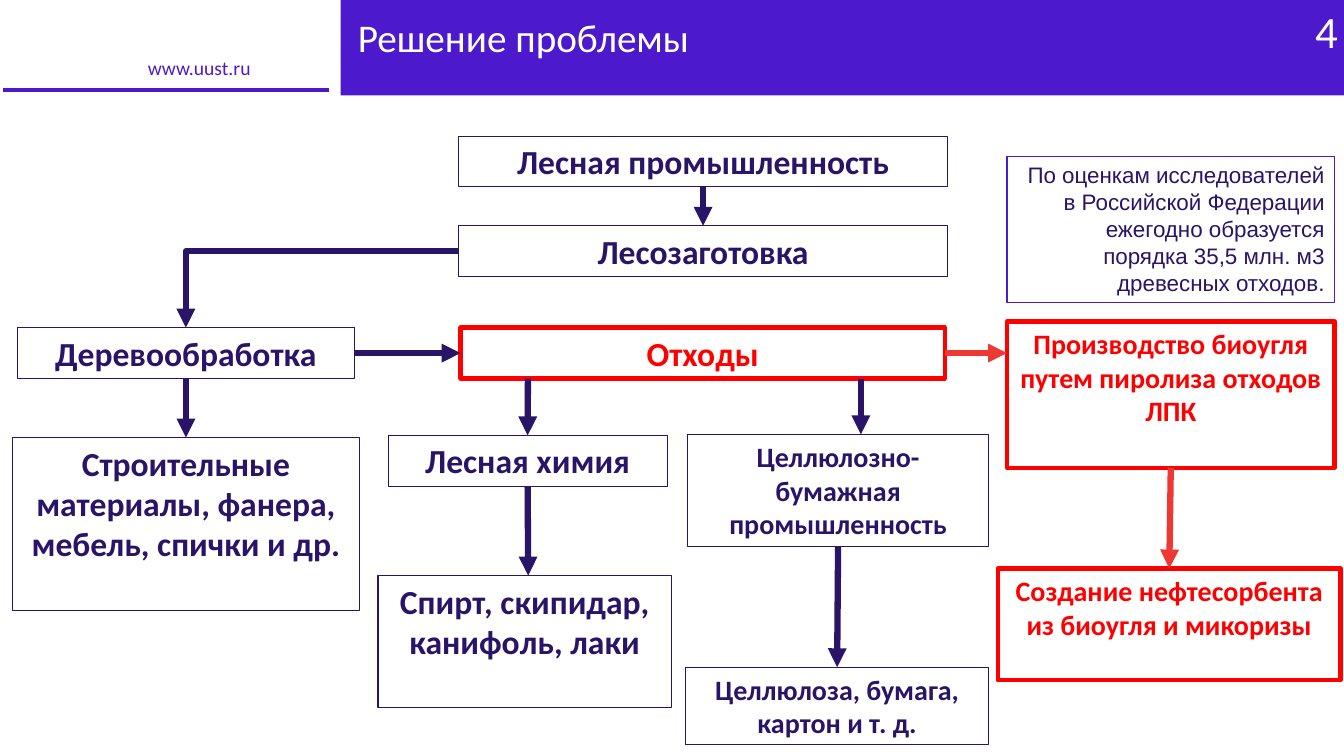
import pptx
import pptx.dml.color
import pptx.enum.shapes
import pptx.enum.text
import pptx.oxml.ns
import pptx.util
from lxml import etree

Pt = pptx.util.Pt
ALIGN = pptx.enum.text.PP_ALIGN
ANCHOR = pptx.enum.text.MSO_ANCHOR
RECT = pptx.enum.shapes.MSO_SHAPE.RECTANGLE
CONNECTOR = pptx.enum.shapes.MSO_CONNECTOR
qn = pptx.oxml.ns.qn

VIOLET = "4D19CC"
NAVY = "2A1468"
RED = "FF0000"
CORAL = "ED3833"
WHITE = "FFFFFF"
TOP, LEFT, BOTTOM, RIGHT = range(4)


def rgb(colour):
    return pptx.dml.color.RGBColor.from_string(colour)


def place(sp, x, y, w, h):
    sp.left, sp.top, sp.width, sp.height = Pt(x), Pt(y), Pt(w), Pt(h)


def write(sp, text, size, colour, font="Calibri", bold=False,
          align=ALIGN.LEFT, anchor=ANCHOR.TOP, wrap=True, spacing=None):
    tf = sp.text_frame
    tf.word_wrap = wrap
    tf.auto_size = pptx.enum.text.MSO_AUTO_SIZE.NONE
    tf.vertical_anchor = anchor
    p = tf.paragraphs[0]
    p.alignment = align
    p.line_spacing = spacing
    r = p.add_run()
    r.text = text
    r.font.name = font
    r.font.size = Pt(size)
    r.font.bold = bold
    r.font.color.rgb = rgb(colour)


def add_rect(slide, x, y, w, h, fill=None, line=None, line_width=0.75):
    sp = slide.shapes.add_shape(RECT, Pt(x), Pt(y), Pt(w), Pt(h))
    sp.shadow.inherit = False
    if fill:
        sp.fill.solid()
        sp.fill.fore_color.rgb = rgb(fill)
    else:
        sp.fill.background()
    if line:
        sp.line.color.rgb = rgb(line)
        sp.line.width = Pt(line_width)
    else:
        sp.line.fill.background()
    return sp


def add_label(slide, text, x, y, w, h, size, colour, **style):
    sp = slide.shapes.add_textbox(Pt(x), Pt(y), Pt(w), Pt(h))
    write(sp, text, size, colour, **style)


def add_node(slide, text, x, y, w, h, size=24, colour=NAVY, line_width=0.75):
    sp = add_rect(slide, x, y, w, h, line=colour, line_width=line_width)
    write(sp, text, size, colour, bold=True, align=ALIGN.CENTER)
    return sp


def add_arrow(slide, begin, end, colour=NAVY, kind=CONNECTOR.STRAIGHT):
    """Each end is either a point or a (shape, side) pair."""
    points = [(0, 0) if hasattr(e[0], "shape_type") else e for e in (begin, end)]
    cxn = slide.shapes.add_connector(
        kind, *(Pt(value) for point in points for value in point))
    if hasattr(begin[0], "shape_type"):
        cxn.begin_connect(*begin)
    if hasattr(end[0], "shape_type"):
        cxn.end_connect(*end)
    cxn.line.color.rgb = rgb(colour)
    cxn.line.width = Pt(4.5)
    etree.SubElement(cxn.line._get_or_add_ln(), qn("a:tailEnd"), type="triangle")
    etree.SubElement(cxn._element.spPr, qn("a:effectLst"))
    return cxn


def add_header(slide):
    add_rect(slide, 243.4, 0, 716.6, 68.2, fill=VIOLET)
    add_rect(slide, 0, 60.5, 237.6, 7.2, fill=VIOLET, line=WHITE, line_width=4.5)
    add_label(slide, "www.uust.ru", 98.6, 38.2, 112.3, 19.4, 14, VIOLET,
              spacing=0.9)
    title = slide.shapes.title
    slide.shapes._spTree.append(title._element)
    place(title, 248.4, 12.2, 673.2, 33.1)
    write(title, "Решение проблемы", 28, WHITE, anchor=ANCHOR.MIDDLE, spacing=0.9)
    add_label(slide, "4", 932.4, -0.7, 27.6, 46, 32, WHITE, wrap=False)


def add_flowchart(slide):
    forestry = add_node(slide, "Лесная промышленность", 327.6, 97.2, 349.2, 36.2)
    logging = add_node(slide, "Лесозаготовка", 327.6, 161.3, 349.2, 36.2)
    woodwork = add_node(slide, "Деревообработка", 12.2, 234, 241.2, 36.4)
    materials = add_node(slide, "Строительные материалы, фанера, мебель, спички и др.",
                         8.6, 312.5, 248.4, 123.8)
    waste = add_node(slide, "Отходы", 329, 234, 345.8, 36.4,
                     colour=RED, line_width=3)
    pulp = add_node(slide, "Целлюлозно-бумажная промышленность",
                    491, 310.3, 215.3, 79.9, size=20)
    chemistry = add_node(slide, "Лесная химия", 277.2, 311, 199.4, 36.4)
    spirit = add_node(slide, "Спирт, скипидар, канифоль, лаки",
                      270, 411.1, 209.5, 94.3)
    paper = add_node(slide, "Целлюлоза, бумага, картон и т. д.",
                     489.6, 476.6, 216.7, 55.4, size=20)
    biochar = add_node(slide, "Производство биоугля путем пиролиза отходов ЛПК",
                       719.3, 229.7, 234, 104.4, 20, RED, 3)
    sorbent = add_node(slide, "Создание нефтесорбента из биоугля и микоризы",
                       712.8, 406.1, 244.8, 79.9, 20, RED, 3)

    add_arrow(slide, (forestry, BOTTOM), (logging, TOP))
    add_arrow(slide, (woodwork, RIGHT), (waste, LEFT))
    add_arrow(slide, (woodwork, BOTTOM), (materials, TOP))
    add_arrow(slide, (377.1, 270.4), (chemistry, TOP))
    add_arrow(slide, (chemistry, BOTTOM), (377.3, spirit.top.pt))
    add_arrow(slide, (614.9, 270.4), (614.9, pulp.top.pt))
    add_arrow(slide, (pulp, BOTTOM), (paper, TOP))
    add_arrow(slide, (waste, RIGHT), (biochar.left.pt, 252.2), CORAL)
    add_arrow(slide, (biochar, BOTTOM), (sorbent, TOP), CORAL)
    bend = add_arrow(slide, (logging, LEFT), (woodwork, TOP), kind=CONNECTOR.ELBOW)
    bend._element.spPr.find(qn("a:prstGeom")).set("prst", "bentConnector2")


def add_note(slide):
    sp = add_rect(slide, 719.3, 111.6, 234, 104.4, line=VIOLET)
    write(sp, "По оценкам исследователей в Российской Федерации ежегодно "
          "образуется порядка 35,5 млн. м3 древесных отходов.",
          16, NAVY, font="Arial", align=ALIGN.RIGHT)


def main():
    prs = pptx.Presentation()
    prs.slide_width, prs.slide_height = Pt(960), Pt(540)
    slide = prs.slides.add_slide(prs.slide_layouts[5])
    add_header(slide)
    add_flowchart(slide)
    add_note(slide)
    prs.save("out.pptx")


if __name__ == "__main__":
    main()
